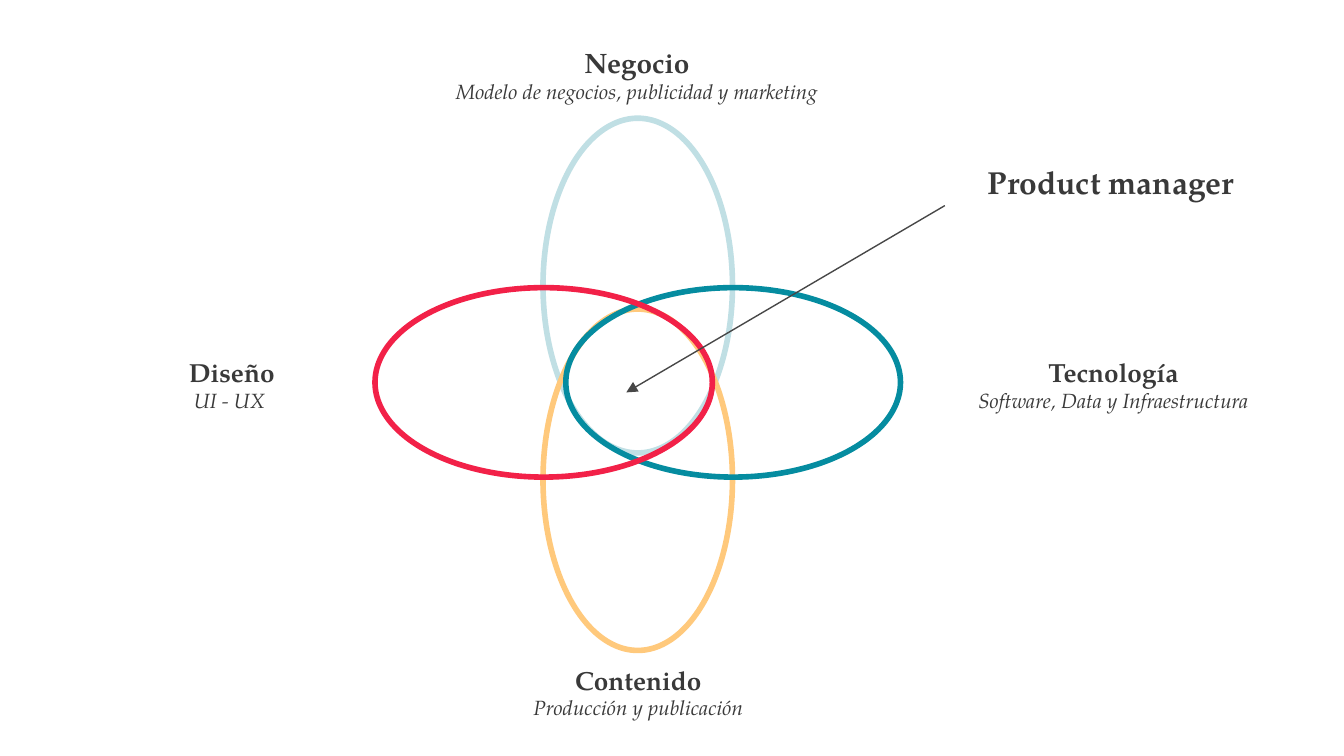
from pptx import Presentation
from pptx.dml.color import RGBColor
from pptx.enum.shapes import MSO_CONNECTOR, MSO_SHAPE
from pptx.enum.text import MSO_AUTO_SIZE, PP_ALIGN
from pptx.oxml.ns import qn
from pptx.util import Inches, Pt
from lxml.etree import SubElement

FONT = "TeX Gyre Pagella"
TEXT_COLOR = "393939"
ARROW_COLOR = "474747"
SUBTITLE_SIZE = 11
SLIDE_WIDTH = Inches(10)
SLIDE_HEIGHT = SLIDE_WIDTH * 9 // 16

LABELS = [
    ((3.47, 4.84, 2.56, 0.62), 14, [["Contenido", "Producción y publicación"]]),
    ((6.81, 2.55, 2.95, 0.62), 14, [["Tecnología"], ["Software, Data y Infraestructura"]]),
    ((0.25, 2.55, 2.95, 0.62), 14, [["Diseño", "UI - UX "]]),
    ((2.74, 0.24, 4, 0.64), 15, [["Negocio"], ["Modelo de negocios, publicidad y marketing"]]),
    ((6.91, 1.11, 2.71, 0.49), 17, [["Product manager"]]),
]

ELLIPSES = [
    ((4.04, 0.88, 1.41, 2.49), 0, "C0DFE4"),
    ((4.04, 2.3, 1.41, 2.54), 0, "FFC97C"),
    ((4.75, 1.6, 1.41, 2.49), 270, "058CA0"),
    ((3.34, 1.59, 1.41, 2.51), 270, "F22148"),
]


def inches(values):
    return [Inches(value) for value in values]


def color(hex_value):
    return RGBColor.from_string(hex_value)


def apply_format(target, values):
    for name, value in values.items():
        setattr(target, name, value)


def add_span(para, text, size, is_title):
    span = para.add_run()
    span.text = text
    apply_format(span.font, {
        "name": FONT,
        "size": Pt(size),
        "bold": is_title,
        "italic": not is_title,
    })
    span.font.color.rgb = color(TEXT_COLOR)


def add_label(page, bounds, title_size, paragraphs):
    frame = page.shapes.add_textbox(*inches(bounds)).text_frame
    margin = Inches(0.1)
    apply_format(frame, {
        "word_wrap": True,
        "auto_size": MSO_AUTO_SIZE.SHAPE_TO_FIT_TEXT,
        "margin_left": margin,
        "margin_top": margin,
        "margin_right": margin,
        "margin_bottom": margin,
    })
    for row, lines in enumerate(paragraphs):
        para = frame.add_paragraph() if row else frame.paragraphs[0]
        para.alignment = PP_ALIGN.CENTER
        for column, line in enumerate(lines):
            if column:
                para.add_line_break()
            is_title = row + column == 0
            add_span(para, line, title_size if is_title else SUBTITLE_SIZE, is_title)


def add_ellipse(page, bounds, rotation, line_color):
    ellipse = page.shapes.add_shape(MSO_SHAPE.OVAL, *inches(bounds))
    ellipse.rotation = rotation
    ellipse.shadow.inherit = False
    ellipse.fill.background()
    ellipse.line.color.rgb = color(line_color)
    ellipse.line.width = Pt(3)


def add_arrow(page, start, end):
    arrow = page.shapes.add_connector(MSO_CONNECTOR.STRAIGHT, *inches(start + end))
    arrow.line.color.rgb = color(ARROW_COLOR)
    arrow.line.width = Pt(0.75)
    properties = arrow._element.spPr
    SubElement(properties.find(qn("a:ln")), qn("a:tailEnd"), type="triangle")
    SubElement(properties, qn("a:effectLst"))


def main():
    deck = Presentation()
    apply_format(deck, {"slide_width": SLIDE_WIDTH, "slide_height": SLIDE_HEIGHT})
    page = deck.slides.add_slide(deck.slide_layouts[6])
    for label in LABELS:
        add_label(page, *label)
    for ellipse in ELLIPSES:
        add_ellipse(page, *ellipse)
    add_arrow(page, (7.03, 1.53), (4.66, 2.92))
    deck.save("out.pptx")


if __name__ == "__main__":
    main()
